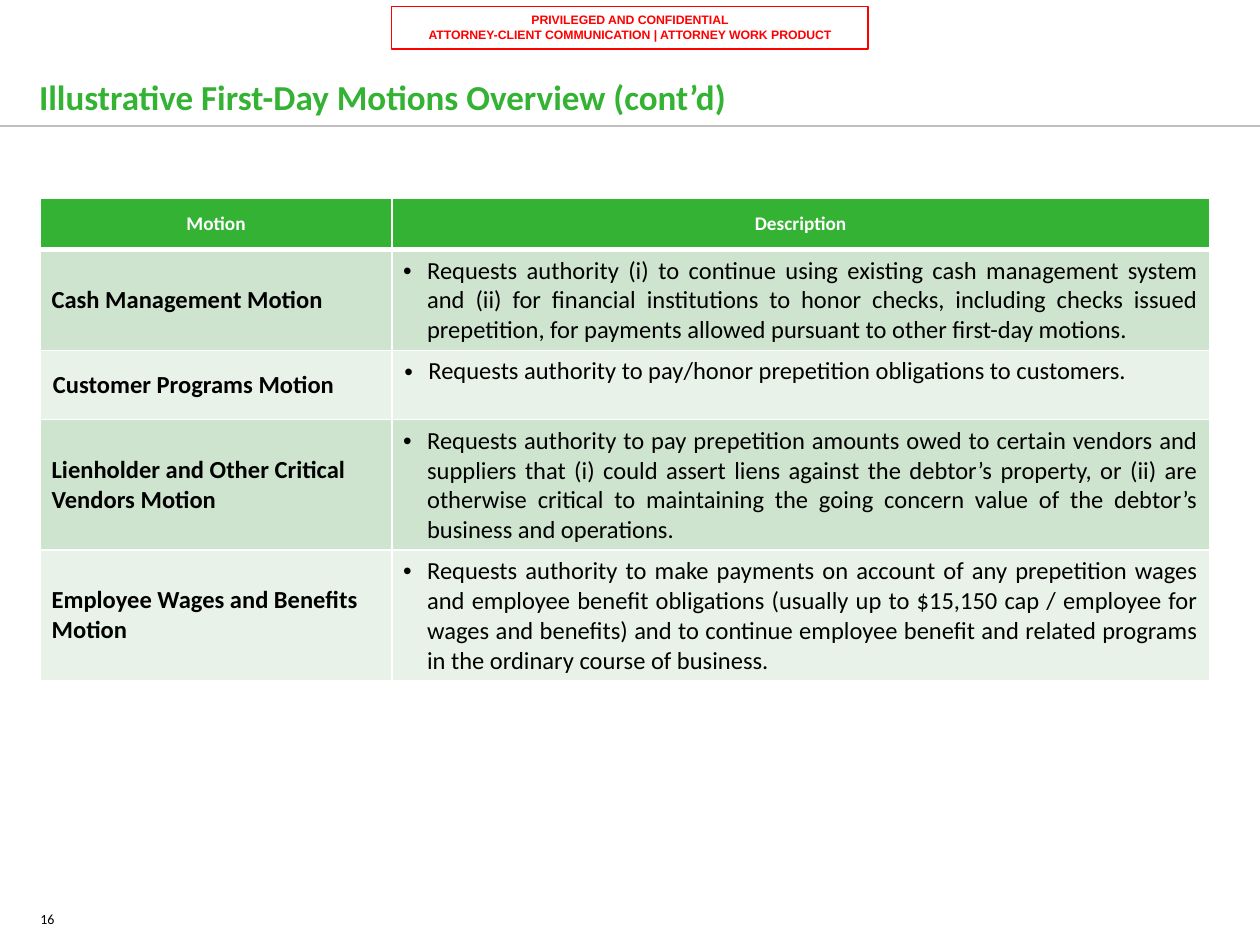
"""Build the slide that lists first-day motions in a two-column table."""
from typing import NamedTuple

from lxml import etree
from pptx import Presentation
from pptx.dml.color import RGBColor
from pptx.enum import shapes, text
from pptx.oxml import ns
from pptx.util import Inches, Pt

GREEN = RGBColor(0x34, 0xB2, 0x33)
MINT = RGBColor(0xCE, 0xE4, 0xCE)
PALE = RGBColor(0xE8, 0xF2, 0xE8)
GREY = RGBColor(0xBF, 0xBF, 0xBF)
RED = RGBColor(0xFF, 0, 0)
BLACK = RGBColor(0, 0, 0)
WHITE = RGBColor(0xFF, 0xFF, 0xFF)
LEFT, CENTER, FULL = text.PP_ALIGN.LEFT, text.PP_ALIGN.CENTER, text.PP_ALIGN.JUSTIFY
TOP, MIDDLE, BOTTOM = text.MSO_ANCHOR.TOP, text.MSO_ANCHOR.MIDDLE, text.MSO_ANCHOR.BOTTOM


class Style(NamedTuple):
    size: float
    color: RGBColor
    bold: bool = False
    align: text.PP_ALIGN = LEFT
    face: str = "Calibri"


class Motion(NamedTuple):
    name: str
    detail: str
    height: float
    inset: float = 0.09


HEAD = Style(11, WHITE, True, CENTER)
NAME = Style(14, BLACK, True)
DETAIL = Style(14, BLACK, align=FULL)
TITLE = Style(20, GREEN, True)
NOTICE = Style(7, RED, True, CENTER, "Arial")
PAGE = Style(8, BLACK)

MOTIONS = [
    Motion("Cash Management Motion",
           "Requests authority (i) to continue using existing cash management system "
           "and (ii) for financial institutions to honor checks, including checks issued "
           "prepetition, for payments allowed pursuant to other first-day motions.", 0.77),
    Motion("Customer Programs Motion",
           "Requests authority to pay/honor prepetition obligations to customers.", 0.55, 0.1),
    Motion("Lienholder and Other Critical Vendors Motion",
           "Requests authority to pay prepetition amounts owed to certain vendors and "
           "suppliers that (i) could assert liens against the debtor’s property, or (ii) are "
           "otherwise critical to maintaining the going concern value of the debtor’s "
           "business and operations.", 0.99),
    Motion("Employee Wages and Benefits Motion",
           "Requests authority to make payments on account of any prepetition wages "
           "and employee benefit obligations (usually up to $15,150 cap / employee for "
           "wages and benefits) and to continue employee benefit and related programs "
           "in the ordinary course of business.", 0.99),
]


def write(frame, lines: list[str], style: Style) -> None:
    """Fill a text frame with one styled run per paragraph."""
    for i, line in enumerate(lines):
        para = frame.add_paragraph() if i else frame.paragraphs[0]
        para.alignment = style.align
        run = para.add_run()
        run.text = line
        font = run.font
        font.size, font.name, font.bold = Pt(style.size), style.face, style.bold
        font.color.rgb = style.color


def pad(frame, left: float, right: float) -> None:
    """Set the insets of a text frame and let it wrap."""
    frame.word_wrap = True
    frame.margin_left, frame.margin_right = Inches(left), Inches(right)
    frame.margin_top = frame.margin_bottom = Inches(0.05)


def bullet(para) -> None:
    """Give a paragraph a hanging bullet."""
    props = para._p.get_or_add_pPr()
    props.set("marL", str(Inches(0.19)))
    props.set("indent", str(-Inches(0.19)))
    etree.SubElement(props, ns.qn("a:buFont")).set("typeface", "Arial")
    etree.SubElement(props, ns.qn("a:buChar")).set("char", "•")


def edge(cell, top: float, bottom: float) -> None:
    """Draw white borders around a cell."""
    props = cell._tc.get_or_add_tcPr()
    for side, width in zip("LRTB", (1, 1, top, bottom)):
        line = etree.SubElement(props, ns.qn(f"a:ln{side}"), w=str(Pt(width)))
        fill = etree.SubElement(line, ns.qn("a:solidFill"))
        etree.SubElement(fill, ns.qn("a:srgbClr"), val=str(WHITE))


def put(cell, words: str, style: Style, fill: RGBColor, anchor: text.MSO_ANCHOR,
        inset: float, top: float = 1, bottom: float = 1) -> None:
    """Write and format one table cell."""
    edge(cell, top, bottom)
    cell.fill.solid()
    cell.fill.fore_color.rgb = fill
    cell.vertical_anchor = anchor
    cell.margin_left = cell.margin_right = Inches(inset)
    cell.margin_top = cell.margin_bottom = Inches(0.05)
    if style is DETAIL:
        bullet(cell.text_frame.paragraphs[0])
    write(cell.text_frame, [words], style)


def add_grid(slide) -> None:
    """Add the table of motions."""
    grid = slide.shapes.add_table(len(MOTIONS) + 1, 2, Inches(0.32), Inches(1.57),
                                  Inches(9.28), Inches(3.71)).table
    for col, width in zip(grid.columns, (2.79, 6.49)):
        col.width = Inches(width)
    grid.rows[0].height = Inches(0.41)
    for i, label in enumerate(("Motion", "Description")):
        put(grid.cell(0, i), label, HEAD, GREEN, MIDDLE, 0.1, bottom=3)
    for i, item in enumerate(MOTIONS, 1):
        grid.rows[i].height = Inches(item.height)
        fill = MINT if i % 2 else PALE
        top = 3 if i == 1 else 1
        put(grid.cell(i, 0), item.name, NAME, fill, MIDDLE, item.inset, top)
        put(grid.cell(i, 1), item.detail, DETAIL, fill, TOP, item.inset, top)


def add_frame(slide) -> None:
    """Add the page number, the rule and the notice."""
    page = slide.shapes.add_textbox(Inches(0.32), Inches(7.18), Inches(2.1), Inches(0.24))
    pad(page.text_frame, 0, 0)
    write(page.text_frame, ["16"], PAGE)

    rule = slide.shapes.add_connector(shapes.MSO_CONNECTOR.STRAIGHT, 0, Inches(1),
                                      Inches(10), Inches(1))
    rule.line.color.rgb = GREY
    rule.line.width = Pt(0.75)
    etree.SubElement(rule._element.spPr, ns.qn("a:effectLst"))

    box = slide.shapes.add_shape(shapes.MSO_SHAPE.RECTANGLE, Inches(3.11), Inches(0.05),
                                 Inches(3.78), Inches(0.34))
    box.shadow.inherit = False
    box.fill.background()
    box.line.color.rgb = RED
    box.line.width = Pt(0.75)
    pad(box.text_frame, 0.1, 0.1)
    box.text_frame.vertical_anchor = TOP
    write(box.text_frame, ["PRIVILEGED AND CONFIDENTIAL",
                           "ATTORNEY-CLIENT COMMUNICATION | ATTORNEY WORK PRODUCT"], NOTICE)


def add_title(slide) -> None:
    """Place and format the title."""
    title = slide.shapes.title
    title.left, title.top = Inches(0.31), Inches(0.22)
    title.width, title.height = Inches(9.29), Inches(0.76)
    frame = title.text_frame
    pad(frame, 0, 0.1)
    frame.auto_size = text.MSO_AUTO_SIZE.NONE
    frame.vertical_anchor = BOTTOM
    write(frame, ["Illustrative First-Day Motions Overview (cont’d)"], TITLE)


def main() -> None:
    """Build and save the deck."""
    deck = Presentation()
    deck.slide_width, deck.slide_height = Inches(10), Inches(7.5)
    slide = deck.slides.add_slide(deck.slide_layouts[5])
    add_frame(slide)
    add_title(slide)
    add_grid(slide)
    deck.save("out.pptx")


if __name__ == "__main__":
    main()
